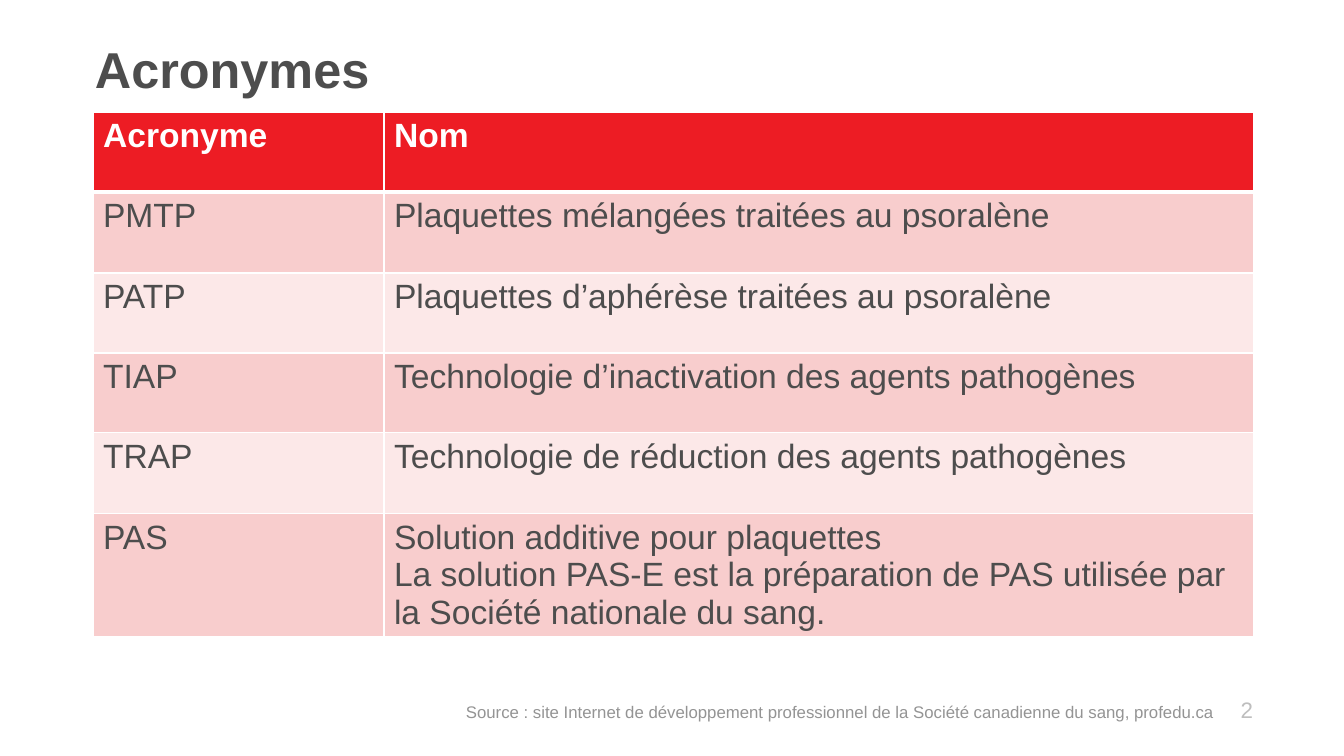
from dataclasses import dataclass

from lxml.etree import SubElement
from pptx import Presentation
from pptx.dml.color import RGBColor
from pptx.enum.text import MSO_ANCHOR, PP_ALIGN
from pptx.oxml.ns import qn
from pptx.util import Emu, Pt

SCALE = 914400 / 100.8
FONT = "Arial"
COLORS = {
    "white": "FFFFFF",
    "red": "ED1C24",
    "rose": "F8CDCD",
    "blush": "FCE8E8",
    "text": "4D4D4D",
    "source": "949494",
    "number": "BEBEBE",
}


@dataclass
class Label:
    text: str
    left: int
    top: int
    width: int
    height: int
    size: int
    color: str
    bold: bool = False
    align: PP_ALIGN = PP_ALIGN.LEFT
    anchor: MSO_ANCHOR = MSO_ANCHOR.TOP
    spacing: float = 1.0


@dataclass
class Entry:
    short: str
    name: str
    height: int


LABELS = [
    Label("2", 96, 667, 1167, 89, 16, "number",
          align=PP_ALIGN.RIGHT, anchor=MSO_ANCHOR.MIDDLE, spacing=0.9),
    Label("Acronymes", 85, 0, 1167, 104, 36, "text",
          bold=True, anchor=MSO_ANCHOR.BOTTOM, spacing=0.9),
    Label("Source : site Internet de développement professionnel de la "
          "Société canadienne du sang, profedu.ca",
          456, 697, 843, 30, 12, "source"),
]
ENTRIES = [
    Entry("Acronyme", "Nom", 80),
    Entry("PMTP", "Plaquettes mélangées traitées au psoralène", 81),
    Entry("PATP", "Plaquettes d’aphérèse traitées au psoralène", 80),
    Entry("TIAP", "Technologie d’inactivation des agents pathogènes", 80),
    Entry("TRAP", "Technologie de réduction des agents pathogènes", 81),
    Entry("PAS", "Solution additive pour plaquettes\n"
          "La solution PAS-E est la préparation de PAS utilisée par "
          "la Société nationale du sang.", 122),
]
WIDTHS = [291, 870]


def px(value: int) -> Emu:
    return Emu(round(value * SCALE))


def style(frame, size: int, color: str, bold: bool) -> None:
    for para in frame.paragraphs:
        for run in para.runs:
            run.font.name = FONT
            run.font.size = Pt(size)
            run.font.bold = bold
            run.font.color.rgb = RGBColor.from_string(COLORS[color])


def add_label(slide, label: Label) -> None:
    box = slide.shapes.add_textbox(
        px(label.left), px(label.top), px(label.width), px(label.height))
    frame = box.text_frame
    frame.word_wrap = True
    frame.vertical_anchor = label.anchor
    frame.text = label.text
    para = frame.paragraphs[0]
    para.alignment = label.align
    para.line_spacing = label.spacing
    style(frame, label.size, label.color, label.bold)


def add_border(cell, side: str, points: int) -> None:
    props = cell._tc.get_or_add_tcPr()
    line = SubElement(props, qn(f"a:ln{side}"), w=str(Pt(points)))
    fill = SubElement(line, qn("a:solidFill"))
    SubElement(fill, qn("a:srgbClr"), val=COLORS["white"])


def fill_cell(cell, text: str, row: int) -> None:
    head = row == 0
    cell.text_frame.text = text
    style(cell.text_frame, 24, "white" if head else "text", head)
    for side in "LRTB":
        thick = (row, side) in [(0, "B"), (1, "T")]
        add_border(cell, side, 3 if thick else 1)
    band = "red" if head else "rose" if row % 2 else "blush"
    cell.fill.solid()
    cell.fill.fore_color.rgb = RGBColor.from_string(COLORS[band])


def add_grid(slide, entries: list[Entry]) -> None:
    height = sum(entry.height for entry in entries)
    table = slide.shapes.add_table(
        len(entries), len(WIDTHS), px(93), px(112),
        px(sum(WIDTHS)), px(height)).table
    for column, width in zip(table.columns, WIDTHS):
        column.width = px(width)
    for row, entry in enumerate(entries):
        table.rows[row].height = px(entry.height)
        for col, text in enumerate((entry.short, entry.name)):
            fill_cell(table.cell(row, col), text, row)


def main() -> None:
    deck = Presentation()
    deck.slide_width = px(1344)
    deck.slide_height = px(756)
    slide = deck.slides.add_slide(deck.slide_layouts[6])
    add_grid(slide, ENTRIES)
    for label in LABELS:
        add_label(slide, label)
    deck.save("out.pptx")


if __name__ == "__main__":
    main()
